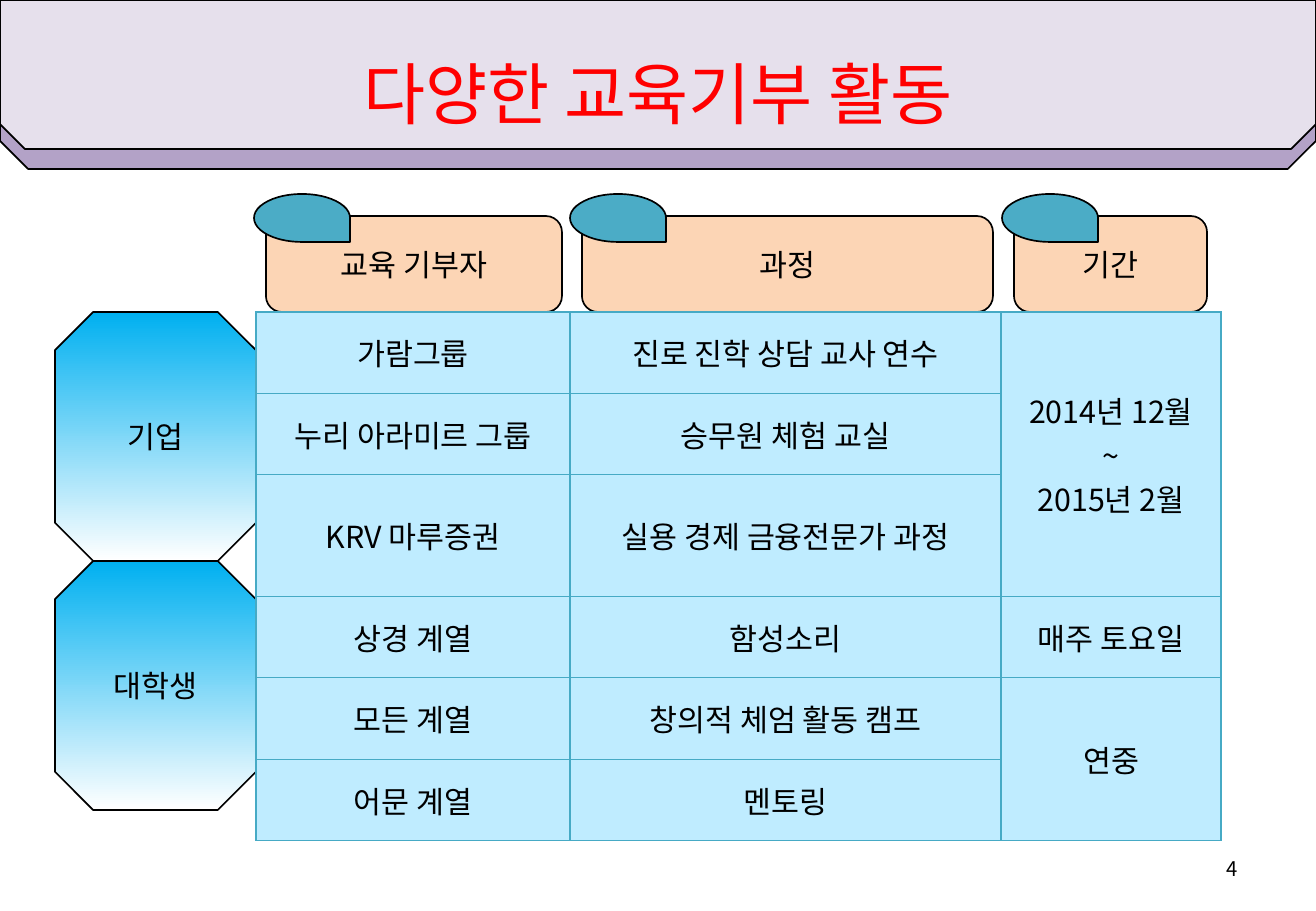
"""Build the slide on educational donation activities."""
from lxml.etree import SubElement
from pptx import Presentation
from pptx.dml.color import RGBColor
from pptx.enum.shapes import MSO_SHAPE
from pptx.enum.text import MSO_ANCHOR, PP_ALIGN
from pptx.oxml.ns import qn
from pptx.util import Emu, Pt

PX = 914400 / 121.5
FONT = "Noto Sans CJK KR"
BLACK = RGBColor(0x00, 0x00, 0x00)
RED = RGBColor(0xFF, 0x00, 0x00)
WHITE = RGBColor(0xFF, 0xFF, 0xFF)
PURPLE = RGBColor(0xB3, 0xA2, 0xC7)
LILAC = RGBColor(0xE6, 0xE0, 0xEC)
PEACH = RGBColor(0xFC, 0xD5, 0xB5)
TEAL = RGBColor(0x4B, 0xAC, 0xC6)
SKY = RGBColor(0x00, 0xB0, 0xF0)
PALE_BLUE = RGBColor(0xBF, 0xEC, 0xFF)
BORDER = RGBColor(0x46, 0xAA, 0xC5)


def write(tf, text, size=18, color=BLACK, align=PP_ALIGN.CENTER):
    tf.text = text
    tf.vertical_anchor = MSO_ANCHOR.MIDDLE
    for p in tf.paragraphs:
        p.alignment = align
        p.font.size = Pt(size)
        p.font.color.rgb = color
        p.font.name = FONT
        SubElement(p.font._rPr, qn("a:ea"), typeface=FONT)


def add_box(kind, box, fill=None, flip=False):
    sp = s.shapes.add_shape(kind, *[Emu(round(v * PX)) for v in box])
    sp.shadow.inherit = False
    sp.line.color.rgb = BLACK
    sp.line.width = Pt(1)
    if fill is not None:
        sp.fill.solid()
        sp.fill.fore_color.rgb = fill
    if flip:
        sp._element.spPr.find(qn("a:xfrm")).set("flipV", "1")
    return sp


prs = Presentation()
prs.slide_width = Emu(round(1316 * PX))
prs.slide_height = Emu(round(911 * PX))
s = prs.slides.add_slide(prs.slide_layouts[5])

for height, fill in ((169, PURPLE), (149, LILAC)):
    add_box(MSO_SHAPE.SNIP_2_SAME_RECTANGLE, (0, 0, 1316, height), fill, True)

title = s.shapes.title
title.left, title.top, title.width, title.height = [
    Emu(round(v * PX)) for v in (66, 17, 1184, 152)]
write(title.text_frame, "다양한 교육기부 활동", 40, RED)
s.shapes._spTree.append(title._element)

number = s.shapes.add_textbox(*[Emu(round(v * PX)) for v in (943, 844, 307, 49)])
number.text_frame.word_wrap = True
write(number.text_frame, "4", 12, align=PP_ALIGN.RIGHT)

for left, width, text in ((266, 296, "교육 기부자"), (582, 411, "과정"), (1014, 193, "기간")):
    header = add_box(MSO_SHAPE.ROUNDED_RECTANGLE, (left, 216, width, 96), PEACH)
    write(header.text_frame, text)
    add_box(MSO_SHAPE.TEAR, (left - 12, 194, 96, 48), TEAL, True)

for i, text in enumerate(("기업", "대학생")):
    group = add_box(MSO_SHAPE.OCTAGON, (55, 312 + 249 * i, 201, 249))
    group.adjustments[0] = 0.19
    group.fill.gradient()
    group.fill.gradient_angle = 270
    for stop, color, position in zip(group.fill.gradient_stops, (SKY, WHITE), (0, 1)):
        stop.color.rgb = color
        stop.position = position
    write(group.text_frame, text)

rows = (
    ("가람그룹", "진로 진학 상담 교사 연수", "2014년 12월\n~\n2015년 2월"),
    ("누리 아라미르 그룹", "승무원 체험 교실", ""),
    ("KRV 마루증권", "실용 경제 금융전문가 과정", ""),
    ("상경 계열", "함성소리", "매주 토요일"),
    ("모든 계열", "창의적 체엄 활동 캠프", "연중"),
    ("어문 계열", "멘토링", ""),
)
widths = (314, 431, 220)
frame = s.shapes.add_table(len(rows), len(widths), *[
    Emu(round(v * PX)) for v in (256, 312, sum(widths), 489)])
table = frame.table
table.first_row = table.horz_banding = False
for column, width in zip(table.columns, widths):
    column.width = Emu(round(width * PX))

for r, row in enumerate(rows):
    for c, text in enumerate(row):
        cell = table.cell(r, c)
        tcPr = cell._tc.get_or_add_tcPr()
        for side in ("lnL", "lnR", "lnT", "lnB"):
            ln = SubElement(tcPr, qn(f"a:{side}"), w=str(Pt(0.75)))
            fill = SubElement(ln, qn("a:solidFill"))
            SubElement(fill, qn("a:srgbClr"), val=str(BORDER))
        cell.fill.solid()
        cell.fill.fore_color.rgb = PALE_BLUE
        cell.vertical_anchor = MSO_ANCHOR.MIDDLE
        if text:
            write(cell.text_frame, text)

for first, last in ((0, 2), (4, 5)):
    table.cell(first, 2).merge(table.cell(last, 2))

prs.save("out.pptx")
